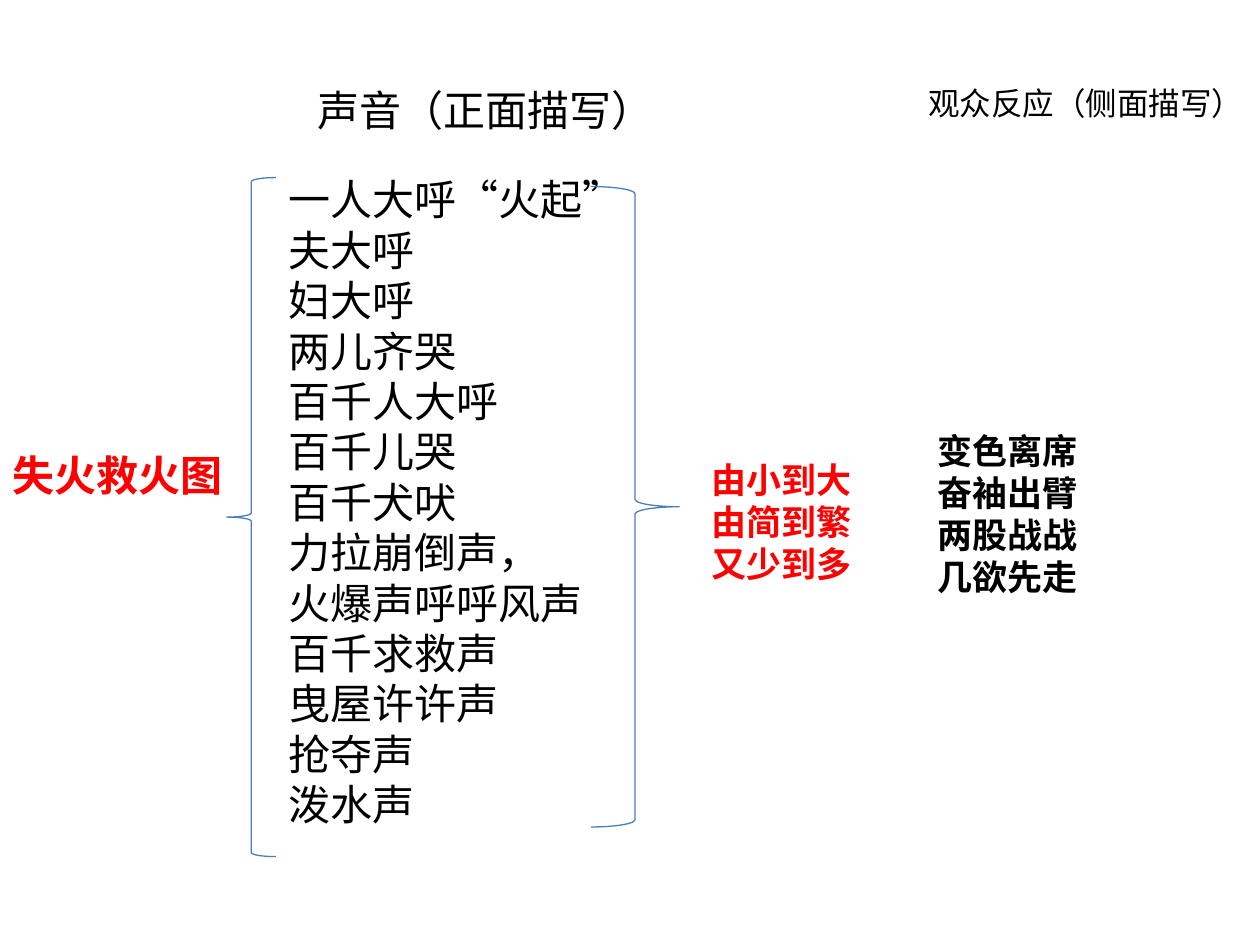
from lxml import etree
from pptx import Presentation
from pptx import util as u
from pptx.dml import color
from pptx.enum import shapes, text
from pptx.oxml import ns

BLACK, RED, BLUE = "000000", "FF0000", "4B7EBC"
SOUNDS = ["一人大呼“火起”", "夫大呼", "妇大呼", "两儿齐哭", "百千人大呼", "百千儿哭", "百千犬吠",
          "力拉崩倒声，", "火爆声呼呼风声", "百千求救声", "曳屋许许声", "抢夺声", "泼水声"]
PROGRESSION = ["由小到大", "由简到繁", "又少到多"]
REACTIONS = ["变色离席", "奋袖出臂", "两股战战", "几欲先走"]


def rgb(hex_color):
    """Turn a hex string into a colour."""
    return color.RGBColor.from_string(hex_color)


def place(sp, left, top, width, height):
    """Position a shape, in points."""
    sp.left, sp.top = u.Pt(left), u.Pt(top)
    sp.width, sp.height = u.Pt(width), u.Pt(height)


def fill_text(sp, lines, size, hex_color=BLACK, bold=False):
    """Write plain left-aligned lines, one paragraph each."""
    tf = sp.text_frame
    tf.word_wrap = True
    tf.auto_size = text.MSO_AUTO_SIZE.SHAPE_TO_FIT_TEXT
    tf.vertical_anchor = text.MSO_ANCHOR.TOP
    for i, line in enumerate(lines):
        p = tf.add_paragraph() if i else tf.paragraphs[0]
        p.alignment = text.PP_ALIGN.LEFT
        p.space_before = u.Pt(0)
        if sp.is_placeholder:
            pPr = p._p.get_or_add_pPr()
            pPr.set("marL", "0")
            pPr.set("indent", "0")
            etree.SubElement(pPr, ns.qn("a:buNone"))
        r = p.add_run()
        r.text = line
        r.font.name, r.font.size, r.font.bold = "Calibri", u.Pt(size), bold
        r.font.color.rgb = rgb(hex_color)


def add_label(s, box, lines, size, hex_color=BLACK, bold=False):
    """Add a text box holding the given lines."""
    sp = s.shapes.add_textbox(0, 0, 0, 0)
    place(sp, *box)
    fill_text(sp, lines, size, hex_color, bold)


def add_brace(s, kind, box):
    """Add a thin outlined brace."""
    sp = s.shapes.add_shape(kind, 0, 0, 0, 0)
    place(sp, *box)
    sp.shadow.inherit = False
    sp.fill.background()
    sp.line.color.rgb = rgb(BLUE)
    sp.line.width = u.Pt(0.75)


def main():
    """Build the slide and save it."""
    prs = Presentation()
    prs.slide_width, prs.slide_height = u.Pt(720), u.Pt(540)
    s = prs.slides.add_slide(prs.slide_layouts[1])
    title, body = s.shapes.title, s.placeholders[1]
    place(title, 174.5, 44.6, 214, 36)
    fill_text(title, ["声音（正面描写）"], 24)
    place(body, 157.7, 95.8, 220, 407)
    fill_text(body, SOUNDS, 24)
    add_brace(s, shapes.MSO_SHAPE.LEFT_BRACE, (129.6, 101.5, 28, 388))
    add_brace(s, shapes.MSO_SHAPE.RIGHT_BRACE, (337.7, 106.6, 50.4, 366))
    add_label(s, (0, 253.4, 146, 36), ["失火救火图"], 24, RED, True)
    add_label(s, (399.6, 258.5, 96, 80), PROGRESSION, 20, RED, True)
    add_label(s, (523.4, 44.6, 196.6, 29), ["观众反应（侧面描写）"], 18)
    add_label(s, (528.5, 241.9, 96, 104), REACTIONS, 20, BLACK, True)
    prs.save("out.pptx")


if __name__ == "__main__":
    main()
